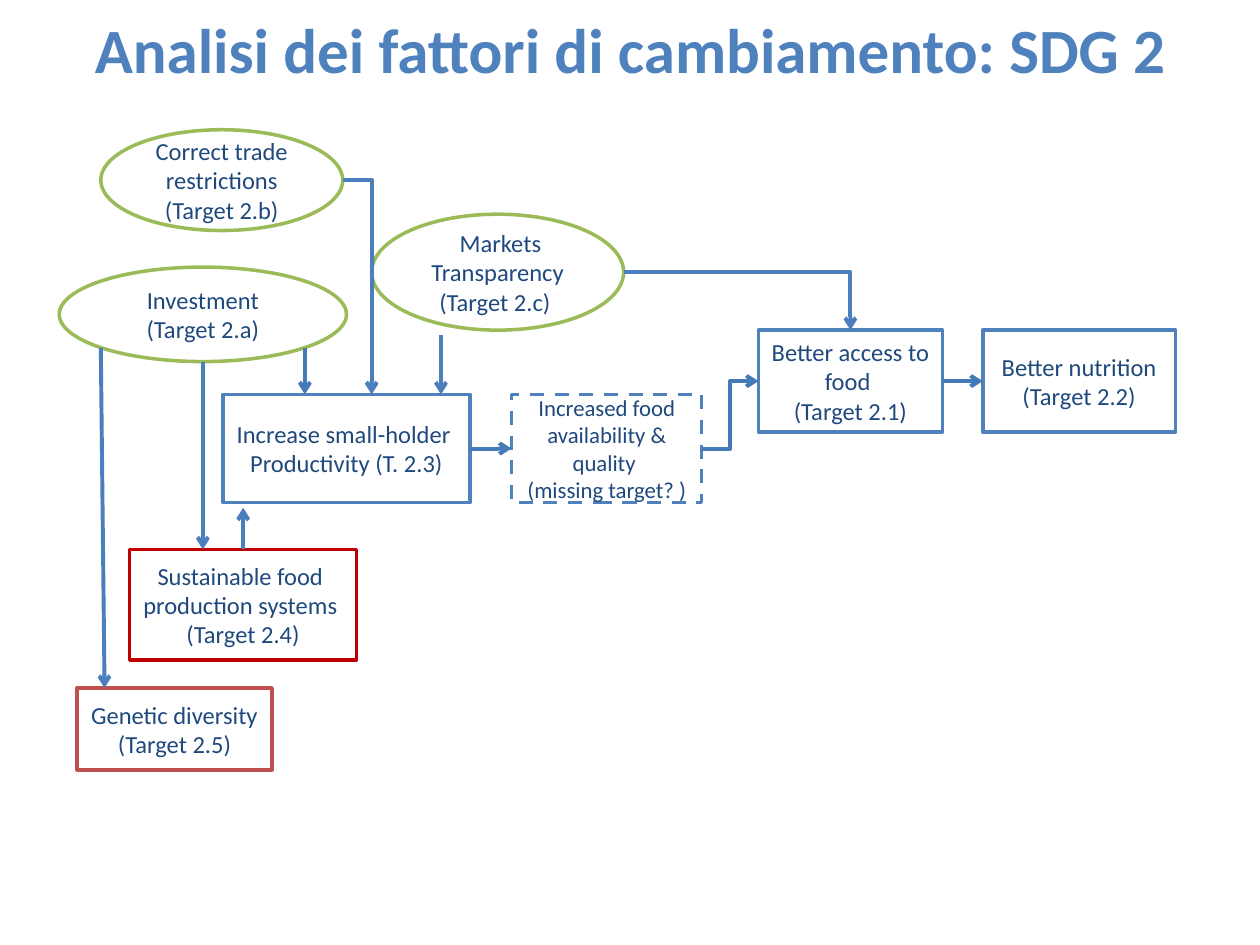
from dataclasses import dataclass

import lxml.etree
import pptx
import pptx.dml.color
import pptx.enum.dml
import pptx.enum.shapes
import pptx.enum.text
import pptx.oxml.ns
import pptx.util

SHAPE = pptx.enum.shapes.MSO_SHAPE
CONNECTOR = pptx.enum.shapes.MSO_CONNECTOR
TOP, LEFT, BOTTOM, RIGHT = range(4)


@dataclass(frozen=True)
class Theme:
    font: str = "Calibri"
    title: str = "4F81BD"
    text: str = "1F497D"
    paper: str = "FFFFFF"
    target: str = "4F81BD"
    means: str = "9BBB59"
    critical: str = "C00000"
    diversity: str = "C0504D"
    flow: str = "457AB9"
    link: str = "4B7EBC"
    title_size: float = 36
    body_size: float = 14
    small_size: float = 13
    outline: float = 2
    arrow: float = 2.25


@dataclass(frozen=True)
class Grid:
    """A box in EMU, divided into columns and rows."""
    left: float
    top: float
    width: float
    height: float
    cols: int
    rows: int

    def point(self, col, row):
        return (round(self.left + self.width * col / self.cols),
                round(self.top + self.height * row / self.rows))

    def box(self, col, row, cols, rows):
        return (*self.point(col, row), round(self.width * cols / self.cols),
                round(self.height * rows / self.rows))


THEME = Theme()

# name: (kind, column, row, columns, rows, line colour, paragraphs)
NODES = {
    "productivity": (SHAPE.RECTANGLE, 13.7, 21.3, 19.6, 8.6, THEME.target,
                     ["Increase small-holder ", "Productivity (T. 2.3)"]),
    "availability": (SHAPE.RECTANGLE, 36.6, 21.3, 15.1, 8.6, THEME.target,
                     ["Increased food availability & quality \n(missing target? )"]),
    "access": (SHAPE.RECTANGLE, 56.2, 16.2, 14.6, 8.1, THEME.target,
               ["Better access to food ", "(Target 2.1)"]),
    "nutrition": (SHAPE.RECTANGLE, 74, 16.2, 15.3, 8.1, THEME.target,
                  ["Better nutrition", "(Target 2.2)"]),
    "investment": (SHAPE.OVAL, 0.7, 11.2, 22.8, 7.5, THEME.means,
                   ["Investment\n(Target 2.a)"]),
    "systems": (SHAPE.RECTANGLE, 6.3, 33.6, 18, 8.8, THEME.critical,
                ["Sustainable food \nproduction systems ", "(Target 2.4)"]),
    "diversity": (SHAPE.RECTANGLE, 2.1, 44.6, 15.5, 6.5, THEME.diversity,
                  ["Genetic diversity ", "(Target 2.5)"]),
    "trade": (SHAPE.OVAL, 4, 0.3, 19.2, 8, THEME.means,
              ["Correct trade restrictions (Target 2.b)"]),
    "markets": (SHAPE.OVAL, 25.5, 7, 20, 9.2, THEME.means,
                [" Markets Transparency (Target 2.c) "]),
}


def rgb(value):
    return pptx.dml.color.RGBColor.from_string(value)


def write(sp, paragraphs, size, color, bold=False):
    """Fill the shape with centred text; a newline is a line break."""
    tf = sp.text_frame
    tf.word_wrap = True
    tf.vertical_anchor = pptx.enum.text.MSO_ANCHOR.MIDDLE
    for i, text in enumerate(paragraphs):
        p = tf.add_paragraph() if i else tf.paragraphs[0]
        p.alignment = pptx.enum.text.PP_ALIGN.CENTER
        for j, line in enumerate(text.split("\n")):
            if j:
                p.add_line_break()
            r = p.add_run()
            r.text = line
            r.font.name = THEME.font
            r.font.size = pptx.util.Pt(size)
            r.font.bold = bold
            r.font.color.rgb = rgb(color)


def add_node(s, grid, kind, col, row, cols, rows, color, paragraphs, size):
    sp = s.shapes.add_shape(kind, *grid.box(col, row, cols, rows))
    sp.shadow.inherit = False
    sp.fill.solid()
    sp.fill.fore_color.rgb = rgb(THEME.paper)
    sp.line.color.rgb = rgb(color)
    sp.line.width = pptx.util.Pt(THEME.outline)
    write(sp, paragraphs, size, THEME.text)
    return sp


def add_arrow(s, start, end, color, kind=CONNECTOR.STRAIGHT, one_bend=False):
    """Join two ends, each a point or a (shape, side) pair."""
    glued = [not isinstance(e[0], int) for e in (start, end)]
    first, last = ((0, 0) if g else e for g, e in zip(glued, (start, end)))
    c = s.shapes.add_connector(kind, *first, *last)
    if glued[0]:
        c.begin_connect(*start)
    if glued[1]:
        c.end_connect(*end)
    c.line.color.rgb = rgb(color)
    c.line.width = pptx.util.Pt(THEME.arrow)
    qn = pptx.oxml.ns.qn
    sppr = c._element.spPr
    lxml.etree.SubElement(sppr.find(qn("a:ln")), qn("a:tailEnd"), type="arrow")
    lxml.etree.SubElement(sppr, qn("a:effectLst"))
    if one_bend:
        sppr.find(qn("a:prstGeom")).set("prst", "bentConnector2")


def add_title(s, box):
    sp = s.shapes.add_textbox(*box)
    write(sp, ["Analisi dei fattori di cambiamento: SDG 2 "],
          THEME.title_size, THEME.title, bold=True)


def add_diagram(s, grid):
    nodes = {}
    for name, node in NODES.items():
        size = THEME.small_size if name == "availability" else THEME.body_size
        nodes[name] = add_node(s, grid, *node, size)
    nodes["availability"].line.dash_style = pptx.enum.dml.MSO_LINE.DASH
    nodes["systems"].fill.background()

    for source, target, kind in [
            ("productivity", "availability", CONNECTOR.STRAIGHT),
            ("availability", "access", CONNECTOR.ELBOW),
            ("access", "nutrition", CONNECTOR.STRAIGHT)]:
        add_arrow(s, (nodes[source], RIGHT), (nodes[target], LEFT), THEME.flow, kind)

    for start, end in [((23.2, 4.3), (25.5, 21.3)),    # trade to productivity
                       ((45.5, 11.6), (63.5, 16.2))]:  # markets to access
        add_arrow(s, grid.point(*start), grid.point(*end), THEME.link,
                  CONNECTOR.ELBOW, one_bend=True)

    for start, end, color in [
            ((20.2, 17.6), (20.2, 21.3), THEME.flow),  # investment to productivity
            ((12.1, 18.7), (12.1, 33.6), THEME.link),  # investment to systems
            ((4, 17.6), (4.3, 44.6), THEME.link),      # investment to diversity
            ((31, 16.6), (31, 21.3), THEME.link)]:     # markets to productivity
        add_arrow(s, grid.point(*start), grid.point(*end), color)
    add_arrow(s, (nodes["systems"], TOP), grid.point(15.3, 30.3), THEME.link)


def main():
    prs = pptx.Presentation()
    prs.slide_width = pptx.util.Inches(10)
    prs.slide_height = pptx.util.Inches(7.5)
    s = prs.slides.add_slide(prs.slide_layouts[6])
    page = Grid(0, 0, prs.slide_width, prs.slide_height, 100, 75)
    add_title(s, page.box(0, 0, 101.2, 7.6))
    add_diagram(s, Grid(*page.box(4, 10, 90, 52), 90, 52))
    prs.save("out.pptx")


if __name__ == "__main__":
    main()
